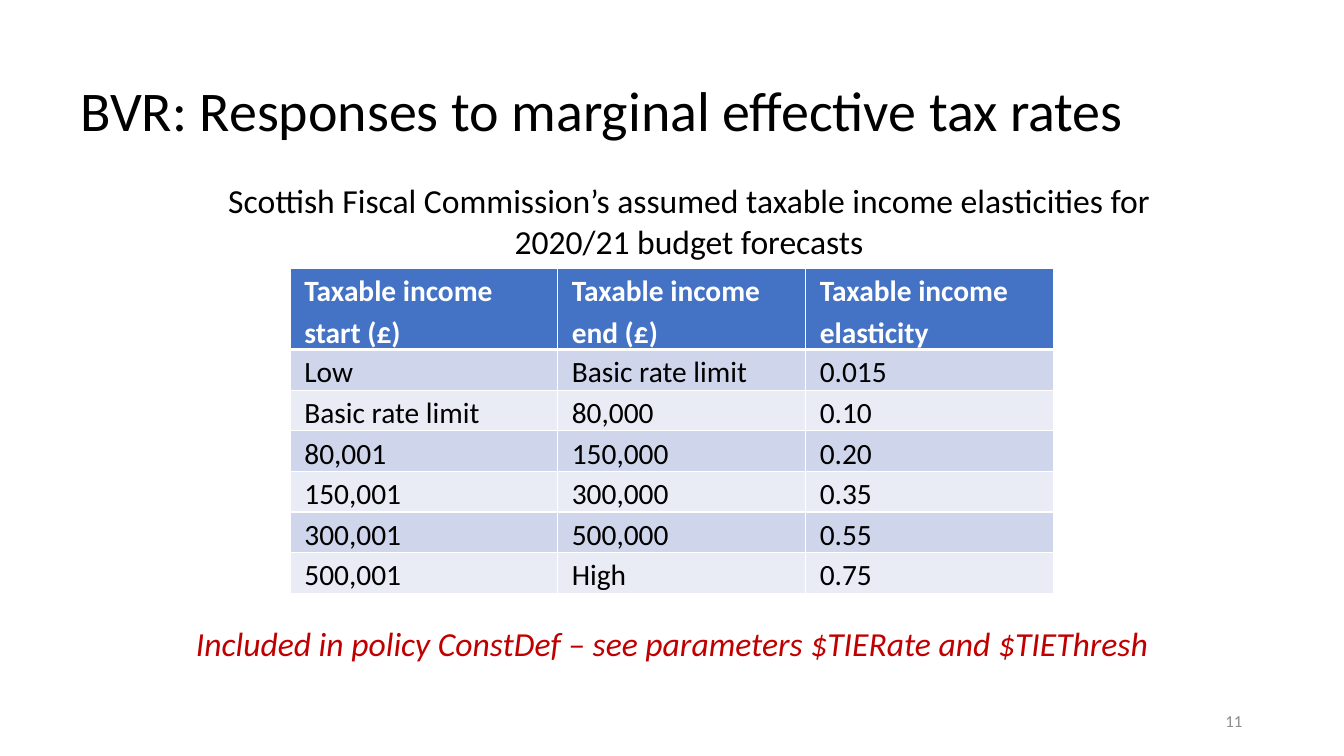
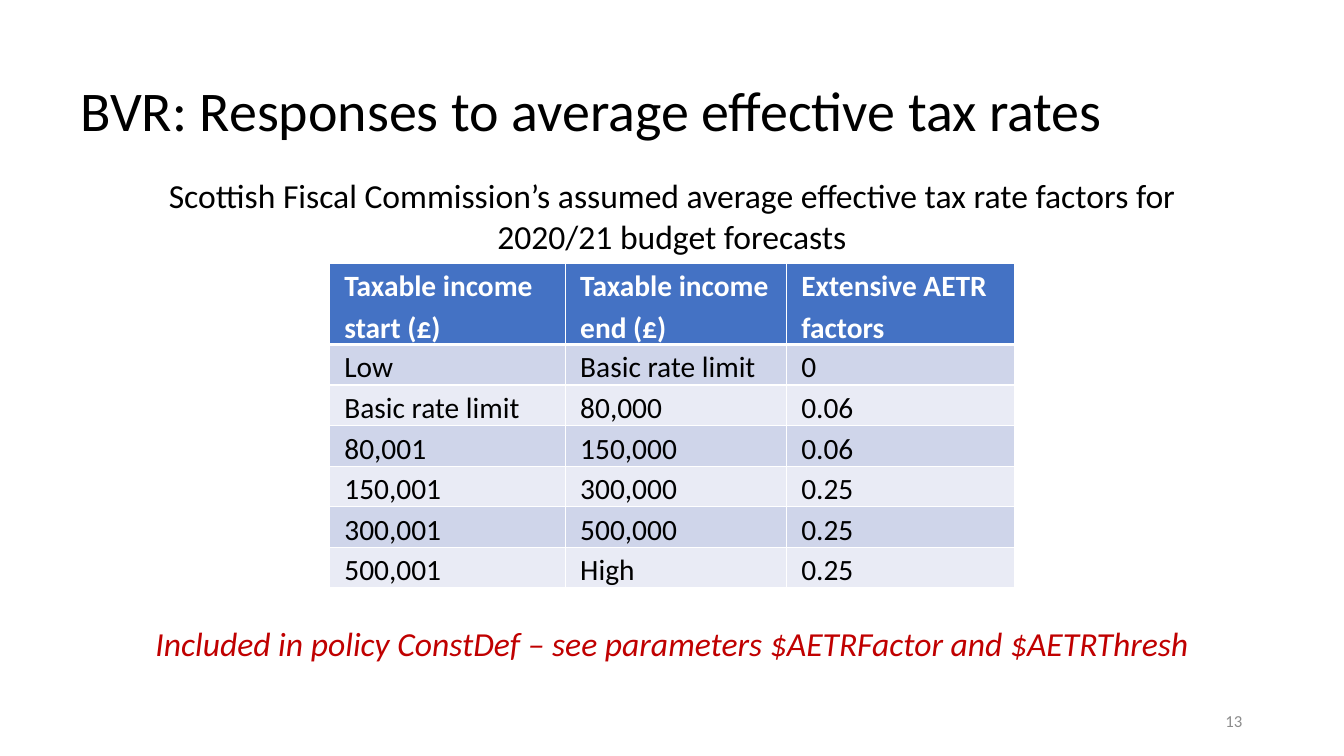
from lxml import etree
from pptx import Presentation, util as u
from pptx.dml.color import RGBColor
from pptx.enum import text
from pptx.oxml import ns

COLOURS = {
    "ink": "000000", "white": "FFFFFF", "note": "C00000", "number": "8C8C8C",
    "header": "4472C4", "odd": "CFD5EA", "even": "E9EBF5",
}
FONT = "Calibri"
LEFT, CENTRE, RIGHT = text.PP_ALIGN.LEFT, text.PP_ALIGN.CENTER, text.PP_ALIGN.RIGHT
TOP, MIDDLE = text.MSO_ANCHOR.TOP, text.MSO_ANCHOR.MIDDLE

# Income bands, shared by both tables
BAND_STARTS = ["Low", "Basic rate limit", "80,001", "150,001", "300,001", "500,001"]
BAND_ENDS = ["Basic rate limit", "80,000", "150,000", "300,000", "500,000", "High"]


class Slides:
    """Holds the style and the current page; lengths are percentages of the slide."""

    def __init__(self):
        self.deck = Presentation()
        self.deck.slide_width, self.deck.slide_height = u.Inches(13.333), u.Inches(7.5)
        self.page = None

    def across(self, share):
        return round(self.deck.slide_width * share / 100)

    def down(self, share):
        return round(self.deck.slide_height * share / 100)

    def add_page(self):
        self.page = self.deck.slides.add_slide(self.deck.slide_layouts[6])

    def style(self, para, size, colour, bold=False, italic=False):
        font = para.font
        font.name, font.size, font.bold, font.italic = FONT, u.Pt(size), bold, italic
        font.color.rgb = RGBColor.from_string(COLOURS[colour])

    def label(self, words, left, top, width, height, size, colour="ink",
              align=LEFT, anchor=TOP, spacing=1.0, italic=False):
        box = self.page.shapes.add_textbox(
            self.across(left), self.down(top), self.across(width), self.down(height))
        frame = box.text_frame
        frame.word_wrap, frame.vertical_anchor = True, anchor
        para = frame.paragraphs[0]
        para.text, para.alignment, para.line_spacing = words, align, spacing
        self.style(para, size, colour, italic=italic)

    def title(self, words):
        self.label(words, 5.25, 5.33, 86.25, 19.33, 40, anchor=MIDDLE, spacing=0.9)

    def number(self, value):
        self.label(str(value), 89.5, 92.67, 3.68, 5.33, 12, "number", RIGHT, MIDDLE)

    def caption(self, words, top, shift):
        width = 76.44
        self.label(words, (100 - width) / 2 + shift, top, width, 12.13, 24, align=CENTRE)

    def note(self, words):
        width = 84.85
        self.label(words, (100 - width) / 2, 81.73, width, 6.67, 24, "note", CENTRE, italic=True)

    def borders(self, cell, **widths):
        properties = cell._tc.get_or_add_tcPr()
        for side in "LRTB":
            line = etree.SubElement(properties, ns.qn(f"a:ln{side}"),
                                    w=str(u.Pt(widths.get(side, 1))))
            fill = etree.SubElement(line, ns.qn("a:solidFill"))
            etree.SubElement(fill, ns.qn("a:srgbClr"), val=COLOURS["white"])

    def table(self, rows, top, columns, inset):
        width, heights = sum(columns), [10.7] + [5.2] * (len(rows) - 1)
        table = self.page.shapes.add_table(
            len(rows), len(columns), self.across((100 - width) / 2), self.down(top),
            self.across(width), self.down(sum(heights))).table
        for column, share in zip(table.columns, columns):
            column.width = self.across(share)
        for index, (row, height, values) in enumerate(zip(table.rows, heights, rows)):
            row.height = self.down(height)
            for cell, value in zip(row.cells, values):
                self.cell(cell, value, index, inset)

    def cell(self, cell, value, index, inset):
        header = index == 0
        # A thick rule separates the header from the body
        thick = {0: {"B": 3}, 1: {"T": 3}}.get(index, {})
        self.borders(cell, **thick)
        cell.fill.solid()
        band = "header" if header else ("even", "odd")[index % 2]
        cell.fill.fore_color.rgb = RGBColor.from_string(COLOURS[band])
        cell.margin_left = cell.margin_right = u.Inches(inset)
        cell.margin_top = cell.margin_bottom = 0
        para = cell.text_frame.paragraphs[0]
        para.text, para.line_spacing, para.space_after = value, 1.15, u.Pt(10)
        self.style(para, 21, "white" if header else "ink", bold=header)

    def response_page(self, kind, number, caption, caption_top, shift,
                      heading, values, columns, inset, parameters):
        self.add_page()
        self.title(f"BVR: Responses to {kind} effective tax rates")
        self.number(number)
        header = ("Taxable income start (£)", "Taxable income end (£)", heading)
        rows = [header, *zip(BAND_STARTS, BAND_ENDS, values)]
        self.table(rows, caption_top + 12.3, columns, inset)
        self.caption(f"Scottish Fiscal Commission’s assumed {caption} for "
                     "2020/21 budget forecasts", caption_top, shift)
        self.note(f"Included in policy ConstDef – see parameters {parameters}")


def main():
    slides = Slides()

    # Marginal rates
    slides.response_page(
        "marginal", 11, "taxable income elasticities", 23.2, 1.27,
        "Taxable income elasticity", ["0.015", "0.10", "0.20", "0.35", "0.55", "0.75"],
        [19.9, 18.45, 18.45], 0.14, "$TIERate and $TIEThresh")

    # Average rates
    slides.response_page(
        "average", 13, "average effective tax rate factors", 22.53, 0,
        "Extensive AETR factors", ["0", "0.06", "0.06", "0.25", "0.25", "0.25"],
        [17.55, 16.45, 17], 0.15, "$AETRFactor and $AETRThresh")

    slides.deck.save("out.pptx")


if __name__ == "__main__":
    main()
